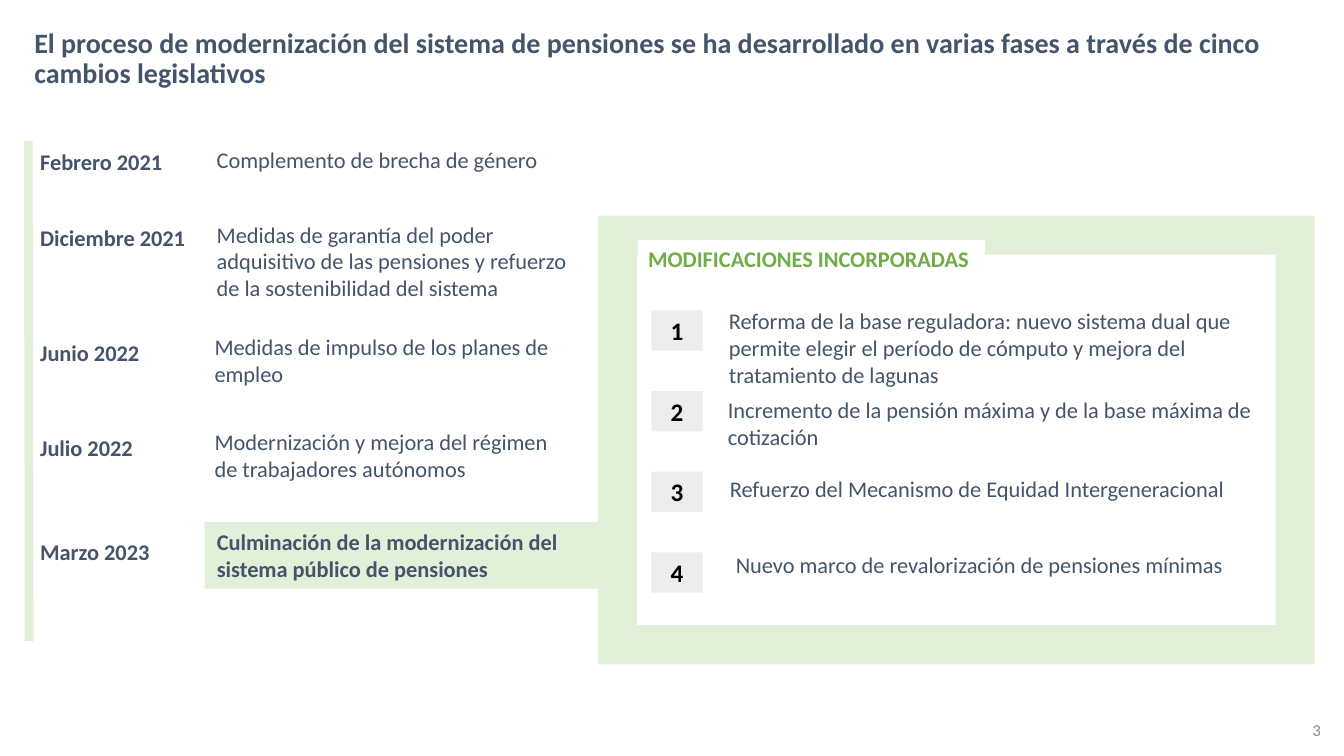
"""Builds the slide on the phases of the pension system reform."""
from dataclasses import dataclass

from lxml import etree
from pptx import Presentation
from pptx import util as u
from pptx.dml.color import RGBColor
from pptx.enum import shapes, text
from pptx.oxml.ns import qn

PX = u.Inches(1) // 100


@dataclass(frozen=True)
class Theme:
    """Colours, type sizes and insets of the slide."""
    font: str = "Calibri"
    ink: str = "44546A"
    accent: str = "70AD47"
    pale: str = "E2F0D9"
    badge: str = "EDEDED"
    black: str = "000000"
    white: str = "FFFFFF"
    muted: str = "8C8C8C"
    title: int = 20
    number: int = 18
    body: int = 16
    footer: int = 12
    tight: tuple = (10, 5)
    loose: tuple = (12, 6)


THEME = Theme()

PHASES = [
    ("Febrero 2021", 142, "Complemento de brecha de género",
     (203, 139, 366, 39), THEME.loose),
    ("Diciembre 2021", 217,
     "Medidas de garantía del poder adquisitivo de las pensiones y refuerzo "
     "de la sostenibilidad del sistema", (203, 213, 377, 93), THEME.loose),
    ("Junio 2022", 332, "Medidas de impulso de los planes de empleo",
     (203, 326, 373, 64), THEME.tight),
    ("Julio 2022", 426,
     "Modernización y mejora del régimen de trabajadores autónomos",
     (203, 420, 373, 64), THEME.tight),
]

CHANGES = [
    ("Reforma de la base reguladora: nuevo sistema dual que permite elegir el "
     "período de cómputo y mejora del tratamiento de lagunas",
     (713, 300, 548, 91)),
    ("Incremento de la pensión máxima y de la base máxima de cotización",
     (712, 388, 554, 64)),
    ("Refuerzo del Mecanismo de Equidad Intergeneracional",
     (714, 466, 546, 37)),
    ("Nuevo marco de revalorización de pensiones mínimas",
     (720, 542, 546, 37)),
]


def emu(box):
    """Turn px lengths into EMU."""
    return [length * PX for length in box]


def write(shape, words, size=THEME.body, color=THEME.ink, bold=False,
          align=text.PP_ALIGN.LEFT, anchor=text.MSO_ANCHOR.TOP,
          inset=THEME.tight):
    """Put one formatted run in a shape and return its paragraph."""
    frame = shape.text_frame
    frame.word_wrap = True
    frame.auto_size = text.MSO_AUTO_SIZE.NONE
    frame.vertical_anchor = anchor
    frame.margin_left = frame.margin_right = inset[0] * PX
    frame.margin_top = frame.margin_bottom = inset[1] * PX
    paragraph = frame.paragraphs[0]
    paragraph.alignment = align
    run = paragraph.add_run()
    run.text = words
    run.font.name = THEME.font
    run.font.size = u.Pt(size)
    run.font.bold = bold
    run.font.color.rgb = RGBColor.from_string(color)
    return paragraph


def add_label(slide, box, words, **style):
    """Add a text box."""
    write(slide.shapes.add_textbox(*emu(box)), words, **style)


def add_panel(slide, box, fill, preset=shapes.MSO_SHAPE.RECTANGLE):
    """Add a flat filled shape without an outline."""
    panel = slide.shapes.add_shape(preset, *emu(box))
    panel.shadow.inherit = False
    panel.fill.solid()
    panel.fill.fore_color.rgb = RGBColor.from_string(fill)
    panel.line.fill.background()
    return panel


def add_spine(slide, ends):
    """Add the thick line beside the dates."""
    spine = slide.shapes.add_connector(shapes.MSO_CONNECTOR.STRAIGHT, *emu(ends))
    spine.line.color.rgb = RGBColor.from_string(THEME.pale)
    spine.line.width = u.Pt(6.25)
    etree.SubElement(spine._element.spPr, qn("a:effectLst"))


def add_title(slide, box, words):
    """Place and fill the title placeholder."""
    title = slide.shapes.title
    title.left, title.top, title.width, title.height = emu(box)
    heading = write(title, words, size=THEME.title, bold=True,
                    anchor=text.MSO_ANCHOR.MIDDLE)
    heading.line_spacing = 0.9


def add_date(slide, top, words):
    """Add a date in the left column."""
    add_label(slide, (30, top, 167, 37), words, bold=True)


def add_timeline(slide):
    """Add the dated phases, the last one highlighted."""
    add_spine(slide, (28, 140, 29, 636))
    for date, top, measure, box, inset in PHASES:
        add_date(slide, top, date)
        add_label(slide, box, measure, inset=inset)
    add_date(slide, 529, "Marzo 2023")
    write(add_panel(slide, (203, 518, 421, 66), THEME.pale),
          "Culminación de la modernización del sistema público de pensiones",
          bold=True, inset=THEME.loose)


def add_changes(slide):
    """Add the framed and numbered list of changes."""
    border = add_panel(slide, (593, 214, 711, 445), THEME.pale,
                       shapes.MSO_SHAPE.FRAME)
    border.adjustments[0] = 0.087
    write(add_panel(slide, (633, 238, 344, 37), THEME.white),
          "MODIFICACIONES INCORPORADAS", color=THEME.accent, bold=True)
    for index, (change, box) in enumerate(CHANGES):
        badge = add_panel(slide, (646, 308 + 80 * index, 51, 40), THEME.badge)
        write(badge, str(index + 1), size=THEME.number, color=THEME.black,
              bold=True, align=text.PP_ALIGN.CENTER)
        add_label(slide, box, change)


def main():
    """Build and save the slide."""
    deck = Presentation()
    deck.slide_width, deck.slide_height = emu((1333, 750))
    slide = deck.slides.add_slide(deck.slide_layouts.get_by_name("Title Only"))
    add_title(slide, (24, 14, 1239, 90),
              "El proceso de modernización del sistema de pensiones se ha "
              "desarrollado en varias fases a través de cinco cambios "
              "legislativos")
    add_timeline(slide)
    add_changes(slide)
    add_label(slide, (1020, 704, 300, 40), "3", size=THEME.footer,
              color=THEME.muted, align=text.PP_ALIGN.RIGHT,
              anchor=text.MSO_ANCHOR.MIDDLE)
    deck.save("out.pptx")


if __name__ == "__main__":
    main()
